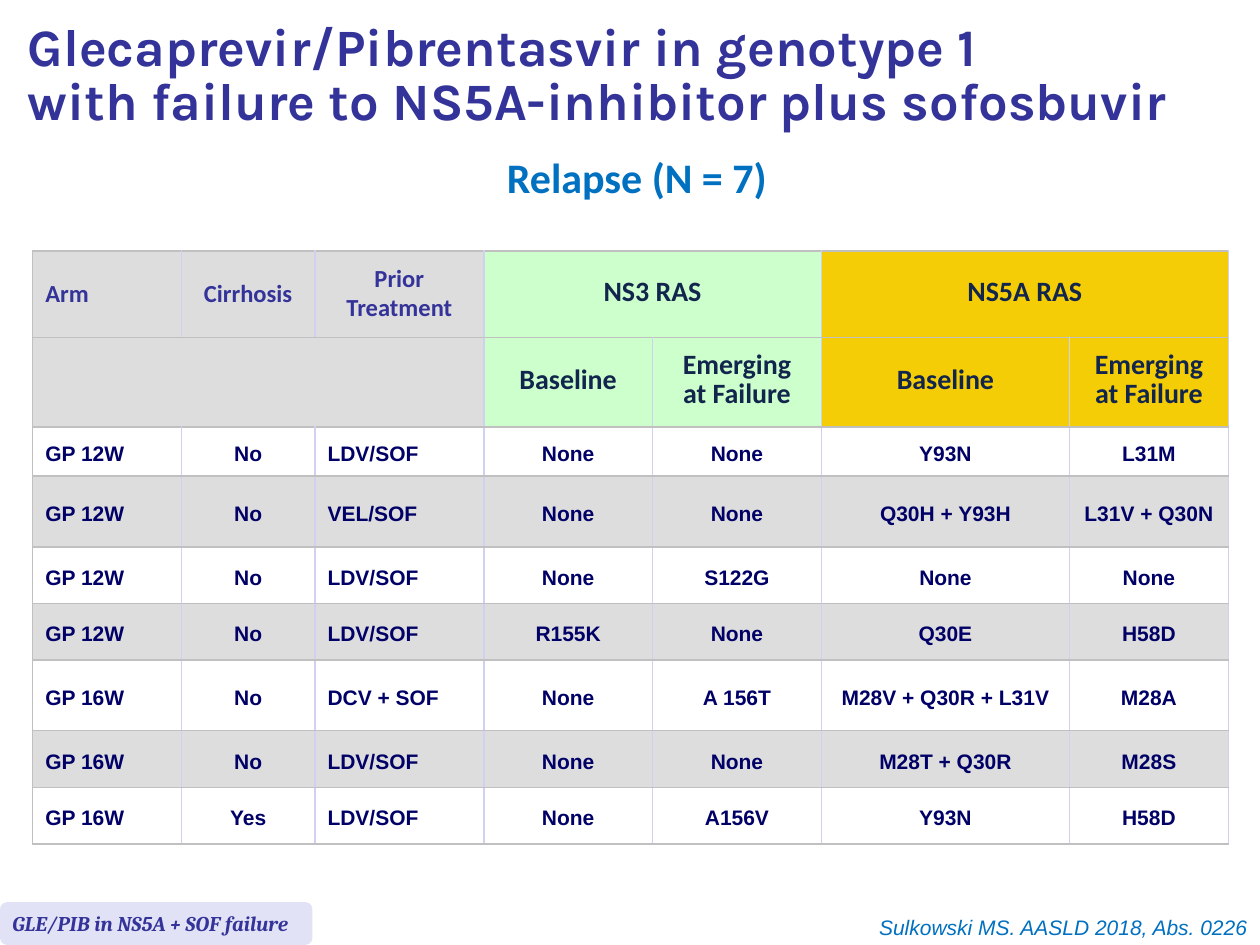
from dataclasses import dataclass
from typing import NamedTuple

from lxml.etree import SubElement
from pptx import Presentation
from pptx.dml.color import RGBColor
from pptx.enum.shapes import MSO_SHAPE as Shape
from pptx.enum.text import MSO_ANCHOR as Anchor, PP_ALIGN as Align
from pptx.oxml.ns import qn
from pptx.util import Inches, Pt

GRID_COLUMNS, GRID_ROWS = 1000, 750
SLIDE_WIDTH, SLIDE_HEIGHT = Inches(10), Inches(7.5)


@dataclass(frozen=True)
class Theme:
    indigo: str = "333399"
    blue: str = "0070C0"
    navy: str = "000066"
    ink: str = "12254C"
    grey: str = "DDDDDD"
    white: str = "FFFFFF"
    green: str = "CCFFCC"
    yellow: str = "F5CD06"
    tag: str = "E2E2F6"
    rule: str = "C0C0C0"
    divider: str = "D0D0F0"
    title_size: float = 30
    subtitle_size: float = 24
    group_size: float = 16
    label_size: float = 14
    body_size: float = 12
    cell_spacing: float = 16.6
    subtitle_spacing: float = 15.2


class Area(NamedTuple):
    column: int
    row: int
    columns: int
    rows: int


class Style(NamedTuple):
    font: str
    size: float
    color: str
    bold: bool = True
    italic: bool = False


class Caption(NamedTuple):
    text: str
    area: Area
    style: Style
    align: Align = Align.LEFT
    anchor: Anchor = Anchor.TOP
    spacing: object = None


class Header(NamedTuple):
    text: str
    row: int
    column: int
    style: Style
    fill: str
    span: int = 1
    align: Align = Align.CENTER


THEME = Theme()
LABEL = Style("Calibri", THEME.label_size, THEME.indigo)
GROUP = Style("Calibri", THEME.group_size, THEME.ink)
BODY = Style("Arial", THEME.body_size, THEME.navy)

TABLE_COLUMN, TABLE_ROW = 26, 199
COLUMN_UNITS = (118, 106, 134, 134, 134, 197, 126)
ROW_UNITS = (69, 71, 39, 56, 45, 45, 56, 45, 45)
LEFT_ALIGNED = (0, 2)

HEADERS = (
    Header("Arm", 0, 0, LABEL, THEME.grey, align=Align.LEFT),
    Header("Cirrhosis", 0, 1, LABEL, THEME.grey),
    Header("Prior Treatment", 0, 2, LABEL, THEME.grey),
    Header("NS3 RAS", 0, 3, GROUP, THEME.green, span=2),
    Header("NS5A RAS", 0, 5, GROUP, THEME.yellow, span=2),
    Header("", 1, 0, LABEL, THEME.grey, span=3),
    Header("Baseline", 1, 3, GROUP, THEME.green),
    Header("Emerging\vat Failure", 1, 4, GROUP, THEME.green),
    Header("Baseline", 1, 5, GROUP, THEME.yellow),
    Header("Emerging at Failure", 1, 6, GROUP, THEME.yellow),
)
PATIENTS = (
    ("GP 12W", "No", "LDV/SOF", "None", "None", "Y93N", "L31M"),
    ("GP 12W", "No", "VEL/SOF", "None", "None", "Q30H + Y93H", "L31V + Q30N"),
    ("GP 12W", "No", "LDV/SOF", "None", "S122G", "None", "None"),
    ("GP 12W", "No", "LDV/SOF", "R155K", "None", "Q30E", "H58D"),
    ("GP 16W", "No", "DCV + SOF", "None", "A 156T", "M28V + Q30R + L31V", "M28A"),
    ("GP 16W", "No", "LDV/SOF", "None", "None", "M28T + Q30R", "M28S"),
    ("GP 16W", "Yes", "LDV/SOF", "None", "A156V", "Y93N", "H58D"),
)
CAPTIONS = (
    Caption("Relapse (N = 7)", Area(33, 134, 945, 35),
            Style("Calibri", THEME.subtitle_size, THEME.blue),
            Align.CENTER, spacing=Pt(THEME.subtitle_spacing)),
    Caption("Glecaprevir/Pibrentasvir in genotype 1\vwith failure to NS5A-inhibitor plus sofosbuvir",
            Area(12, 8, 988, 107), Style("Karla", THEME.title_size, THEME.indigo),
            anchor=Anchor.MIDDLE, spacing=0.85),
    Caption("GLE/PIB in NS5A + SOF failure", Area(0, 718, 280, 30),
            Style("Cambria", THEME.body_size, THEME.indigo, italic=True)),
    Caption("Sulkowski MS. AASLD 2018, Abs. 0226", Area(264, 721, 736, 30),
            Style("Arial", THEME.body_size, THEME.blue, bold=False, italic=True),
            Align.RIGHT),
)
TAG_AREA = Area(0, 716, 248, 34)


def across(columns: int) -> int:
    return SLIDE_WIDTH * columns // GRID_COLUMNS


def down(rows: int) -> int:
    return SLIDE_HEIGHT * rows // GRID_ROWS


def place(area: Area) -> tuple:
    return across(area.column), down(area.row), across(area.columns), down(area.rows)


def write(text_frame, text: str, style: Style, align: Align, spacing=None) -> None:
    text_frame.text = text
    paragraph = text_frame.paragraphs[0]
    paragraph.alignment = align
    if spacing is not None:
        paragraph.line_spacing = spacing
    settings = {"name": style.font, "size": Pt(style.size),
                "bold": style.bold, "italic": style.italic}
    for run in paragraph.runs:
        for name, value in settings.items():
            setattr(run.font, name, value)
        run.font.color.rgb = RGBColor.from_string(style.color)


def draw_caption(slide, caption: Caption) -> None:
    text_frame = slide.shapes.add_textbox(*place(caption.area)).text_frame
    text_frame.word_wrap = True
    text_frame.vertical_anchor = caption.anchor
    write(text_frame, caption.text, caption.style, caption.align, caption.spacing)


def draw_tag(slide) -> None:
    shape = slide.shapes.add_shape(Shape.ROUNDED_RECTANGLE, *place(TAG_AREA))
    shape.shadow.inherit = False
    shape.fill.solid()
    shape.fill.fore_color.rgb = RGBColor.from_string(THEME.tag)
    shape.line.fill.background()


def set_borders(cell, first: bool) -> None:
    properties = cell._tc.get_or_add_tcPr()
    borders = {"a:lnL": THEME.rule if first else THEME.divider, "a:lnR": THEME.divider,
               "a:lnT": THEME.rule, "a:lnB": THEME.rule}
    for tag, color in borders.items():
        line = SubElement(properties, qn(tag), w=str(Pt(1)))
        SubElement(SubElement(line, qn("a:solidFill")), qn("a:srgbClr"), val=color)


def fill_cell(cell, text: str, style: Style, fill: str, align: Align) -> None:
    cell.fill.solid()
    cell.fill.fore_color.rgb = RGBColor.from_string(fill)
    cell.vertical_anchor = Anchor.MIDDLE
    write(cell.text_frame, text, style, align, Pt(THEME.cell_spacing))


def draw_table(slide) -> None:
    area = Area(TABLE_COLUMN, TABLE_ROW, sum(COLUMN_UNITS), sum(ROW_UNITS))
    table = slide.shapes.add_table(len(ROW_UNITS), len(COLUMN_UNITS), *place(area)).table
    table.first_row = table.horz_banding = False
    for column, units in zip(table.columns, COLUMN_UNITS):
        column.width = across(units)
    for row, units in zip(table.rows, ROW_UNITS):
        row.height = down(units)
        for index, cell in enumerate(row.cells):
            set_borders(cell, index == 0)
    for header in HEADERS:
        cell = table.cell(header.row, header.column)
        if header.span > 1:
            cell.merge(table.cell(header.row, header.column + header.span - 1))
        fill_cell(cell, header.text, header.style, header.fill, header.align)
    for row_index, patient in enumerate(PATIENTS):
        fill = THEME.grey if row_index % 2 else THEME.white
        for column_index, text in enumerate(patient):
            align = Align.LEFT if column_index in LEFT_ALIGNED else Align.CENTER
            fill_cell(table.cell(row_index + 2, column_index), text, BODY, fill, align)


def main() -> None:
    presentation = Presentation()
    presentation.slide_width, presentation.slide_height = SLIDE_WIDTH, SLIDE_HEIGHT
    slide = presentation.slides.add_slide(presentation.slide_layouts[6])
    draw_table(slide)
    draw_tag(slide)
    for caption in CAPTIONS:
        draw_caption(slide, caption)
    presentation.save("out.pptx")


if __name__ == "__main__":
    main()
